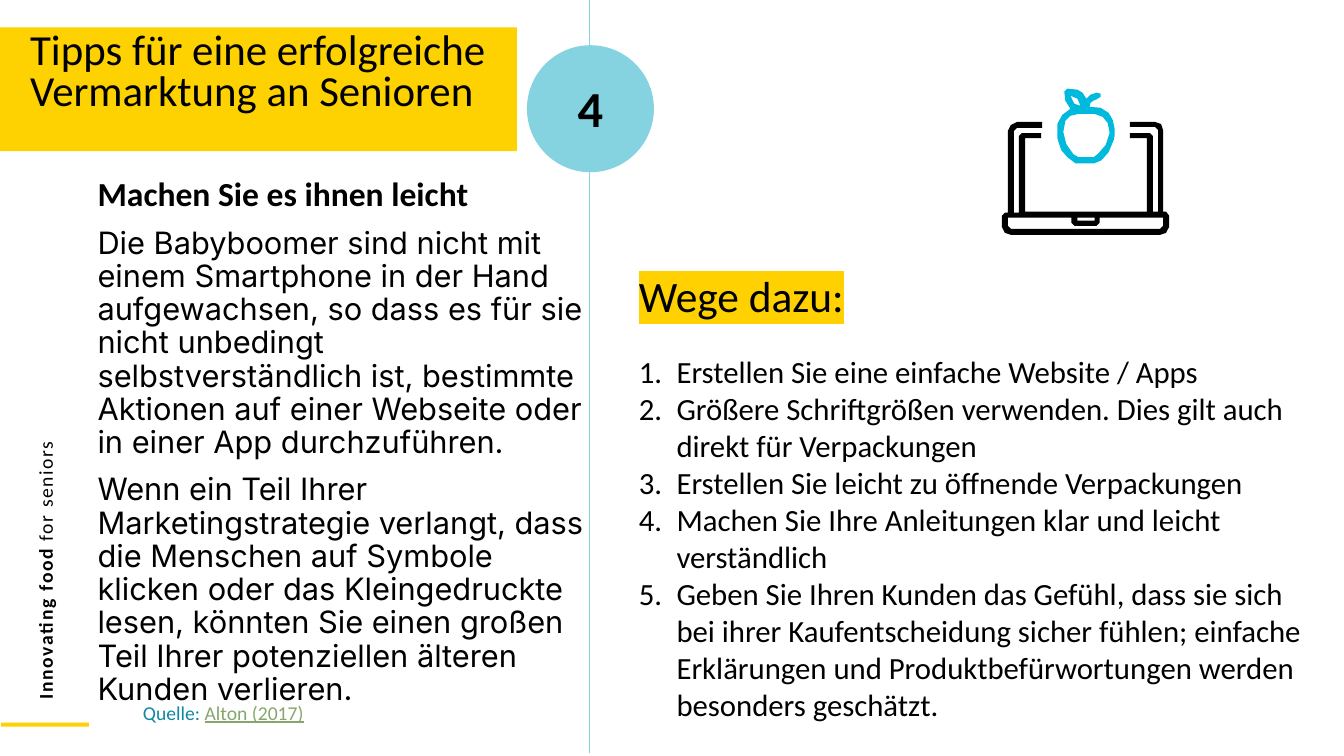
from pptx import Presentation
from pptx.util import Cm, Pt
from pptx.dml.color import RGBColor
from pptx.enum.shapes import MSO_SHAPE as SHAPE, MSO_CONNECTOR as CONN
from pptx.enum.text import PP_ALIGN as ALIGN, MSO_AUTO_SIZE as FIT
from pptx.oxml.ns import qn
from lxml import etree

COLORS = {"yellow": "FFD100", "title": "FED100", "blue": "85D2E1", "cyan": "00BADE",
          "black": "000000", "teal": "1188A3", "green": "87A66E"}


def style(s, color):
    s.shadow.inherit = False
    s.fill.solid()
    s.fill.fore_color.rgb = RGBColor.from_string(COLORS[color])
    s.line.fill.background()
    return s


def add_run(p, text, size, bold=False, color="black", font="Calibri"):
    r = p.add_run()
    r.text = text
    r.font.size = Pt(size)
    r.font.bold = bold
    r.font.name = font
    r.font.color.rgb = RGBColor.from_string(COLORS[color])
    return r


prs = Presentation()
prs.slide_width, prs.slide_height = Cm(33.87), Cm(19.05)
slide = prs.slides.add_slide(prs.slide_layouts[6])
shapes = slide.shapes

# Divider, number circle and footer bar
divider = shapes.add_connector(CONN.STRAIGHT, Cm(14.86), Cm(0), Cm(14.86), Cm(18.97))
divider.line.color.rgb = RGBColor.from_string(COLORS["blue"])
divider.line.width = Pt(1)
etree.SubElement(divider._element.spPr, qn("a:effectLst"))
style(shapes.add_shape(SHAPE.OVAL, Cm(13.28), Cm(1.14), Cm(3.2), Cm(3.2)), "blue")
style(shapes.add_shape(SHAPE.RECTANGLE, Cm(0.03), Cm(18.21), Cm(2.21), Cm(0.1)), "yellow")

# Vertical tagline
tagline = shapes.add_textbox(Cm(-8.43), Cm(7.87), Cm(19.15), Cm(0.86))
tagline.rotation = 270
tagline.text_frame.word_wrap = True
for text, bold in [("Innovating food ", True), ("for seniors", False)]:
    r = add_run(tagline.text_frame.paragraphs[0], text, 14, bold)
    r.font._element.set("spc", "110")

# Left column
tf = shapes.add_textbox(Cm(2.21), Cm(4.34), Cm(12.8), Cm(10.34)).text_frame
tf.word_wrap = True
p = tf.paragraphs[0]
p.line_spacing = 0.9
add_run(p, "Machen Sie es ihnen leicht", 24, True)
for text in [
    "Die Babyboomer sind nicht mit einem Smartphone in der Hand aufgewachsen, so dass es für sie "
    "nicht unbedingt selbstverständlich ist, bestimmte Aktionen auf einer Webseite oder in einer "
    "App durchzuführen.",
    "Wenn ein Teil Ihrer Marketingstrategie verlangt, dass die Menschen auf Symbole klicken oder "
    "das Kleingedruckte lesen, könnten Sie einen großen Teil Ihrer potenziellen älteren Kunden "
    "verlieren.",
]:
    p = tf.add_paragraph()
    p.line_spacing = 0.9
    p.space_before = Pt(10)
    add_run(p, text, 22, font="Inter")

# Title
title = style(shapes.add_textbox(Cm(0), Cm(0.69), Cm(13.03), Cm(3.12)), "title")
tf = title.text_frame
tf.word_wrap = True
tf.margin_left = Cm(0.76)
p = tf.paragraphs[0]
p.line_spacing = 0.8
add_run(p, "Tipps für eine erfolgreiche Vermarktung an Senioren", 30.6)

# Tip number
tf = shapes.add_textbox(Cm(13.28), Cm(1.98), Cm(3.2), Cm(2.39)).text_frame
tf.word_wrap = True
p = tf.paragraphs[0]
p.alignment = ALIGN.CENTER
p.line_spacing = 0.9
add_run(p, "4", 36, True)

# Right column: highlighted heading and numbered list
tf = shapes.add_textbox(Cm(15.85), Cm(6.81), Cm(17.6), Cm(11.63)).text_frame
tf.word_wrap = True
p = tf.paragraphs[0]
p.line_spacing = 0.9
p.space_after = Pt(22)
r = add_run(p, "Wege dazu:", 31)
highlight = etree.Element(qn("a:highlight"))
etree.SubElement(highlight, qn("a:srgbClr"), val=COLORS["yellow"])
r.font._element.find(qn("a:solidFill")).addnext(highlight)
for text in [
    "Erstellen Sie eine einfache Website / Apps",
    "Größere Schriftgrößen verwenden. Dies gilt auch direkt für Verpackungen",
    "Erstellen Sie leicht zu öffnende Verpackungen",
    "Machen Sie Ihre Anleitungen klar und leicht verständlich",
    "Geben Sie Ihren Kunden das Gefühl, dass sie sich bei ihrer Kaufentscheidung sicher fühlen; "
    "einfache Erklärungen und Produktbefürwortungen werden besonders geschätzt.",
]:
    p = tf.add_paragraph()
    pPr = p._p.get_or_add_pPr()
    pPr.set("marL", str(Cm(0.95)))
    pPr.set("indent", str(Cm(-0.95)))
    etree.SubElement(pPr, qn("a:buFont"), typeface="+mj-lt")
    etree.SubElement(pPr, qn("a:buAutoNum"), type="arabicPeriod")
    add_run(p, text, 22)

# Fruit and laptop icon: outlines with cut-outs, in units of 0.0254 cm
fruit = [
    [(1106, 134), (1106, 128), (1104, 119), (1100, 112), (1092, 107), (1081, 106), (1082, 102),
     (1085, 100), (1089, 98), (1092, 96), (1092, 93), (1088, 92), (1082, 94), (1078, 98),
     (1074, 92), (1069, 89), (1059, 88), (1056, 91), (1057, 100), (1062, 108), (1054, 114),
     (1049, 123), (1049, 137), (1053, 149), (1059, 156), (1067, 162), (1077, 162), (1086, 162),
     (1093, 159), (1100, 151), (1105, 139)],
    [(1072, 105), (1066, 103), (1062, 95), (1069, 98)],
    [(1089, 153), (1085, 156), (1080, 156), (1075, 156), (1070, 156), (1065, 153), (1058, 143),
     (1055, 131), (1057, 120), (1062, 115), (1070, 113), (1078, 113), (1086, 113), (1094, 116),
     (1099, 122), (1101, 132), (1097, 144)],
]
laptop = [
    [(1157, 210), (1154, 210), (1154, 129), (1152, 123), (1146, 121), (1121, 121), (1121, 126),
     (1146, 126), (1149, 129), (1149, 210), (1144, 210), (1144, 135), (1141, 132), (1121, 132),
     (1121, 137), (1138, 137), (1138, 210), (1017, 210), (1017, 137), (1033, 137), (1033, 132),
     (1014, 132), (1011, 135), (1011, 211), (1006, 211), (1006, 130), (1009, 127), (1034, 127),
     (1034, 121), (1009, 121), (1003, 124), (1000, 130), (1000, 211), (997, 211), (994, 214),
     (994, 225), (997, 231), (1003, 233), (1151, 233), (1157, 231), (1160, 225), (1160, 214)],
    [(1069, 216), (1086, 216), (1086, 219), (1069, 219)],
    [(1154, 224), (1151, 227), (1003, 227), (1000, 224), (1000, 216), (1063, 216), (1063, 221),
     (1066, 224), (1088, 224), (1091, 221), (1091, 216), (1154, 216)],
]
for outlines, color in [(fruit, "cyan"), (laptop, "black")]:
    builder = shapes.build_freeform(*outlines[0][0], scale=Cm(0.0254))
    for outline in outlines:
        builder.move_to(*outline[0])
        builder.add_line_segments(outline[1:], close=True)
    style(builder.convert_to_shape(), color)

# Source
tf = shapes.add_textbox(Cm(3.35), Cm(17.53), Cm(4.6), Cm(0.86)).text_frame
tf.word_wrap = False
tf.auto_size = FIT.SHAPE_TO_FIT_TEXT
p = tf.paragraphs[0]
add_run(p, "Quelle: ", 14, color="teal")
add_run(p, "Alton (2017)", 14, color="green").font.underline = True

prs.save("out.pptx")
